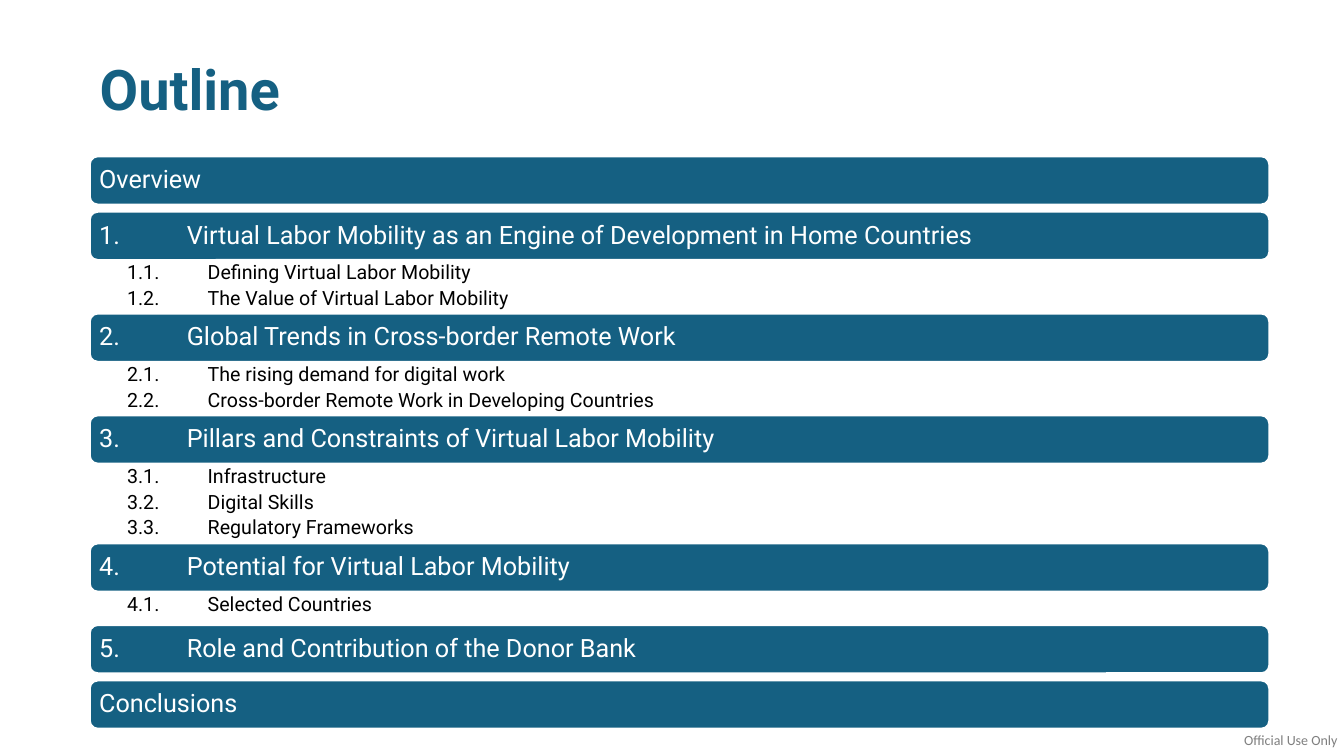
import pptx
import pptx.util
import pptx.dml.color
import pptx.enum.shapes
import pptx.enum.text
import pptx.oxml.ns
import lxml.etree

TITLE = "Outline"
FOOTER = "Official Use Only"
SECTIONS = [
    ("Overview", []),
    ("1.\tVirtual Labor Mobility as an Engine of Development in Home Countries",
     ["1.1.\tDefining Virtual Labor Mobility",
      "1.2.\tThe Value of Virtual Labor Mobility"]),
    ("2.\tGlobal Trends in Cross-border Remote Work",
     ["2.1.\tThe rising demand for digital work",
      "2.2.\tCross-border Remote Work in Developing Countries"]),
    ("3.\tPillars and Constraints of Virtual Labor Mobility",
     ["3.1.\tInfrastructure",
      "3.2.\tDigital Skills",
      "3.3.\tRegulatory Frameworks"]),
    ("4.\tPotential for Virtual Labor Mobility",
     ["4.1.\tSelected Countries"]),
    ("5.\tRole and Contribution of the Donor Bank", []),
    ("Conclusions", []),
]
BLUE, WHITE, BLACK, GRAY = "156082", "FFFFFF", "000000", "7F7F7F"
LEFT, TOP, WIDTH = 0.89, 1.55, 11.7
BAR, GAP = 0.48, 0.07
TOPICS = {0: GAP, 1: 0.33, 2: 0.53, 3: 0.79}

inch = pptx.util.Inches
MIDDLE = pptx.enum.text.MSO_ANCHOR.MIDDLE


def rgb(value):
    return pptx.dml.color.RGBColor.from_string(value)


def write(s, lines, size, color, inset, font="Roboto", bold=False, anchor=None,
          tab=None, spacing=0.9, after=0):
    tf = s.text_frame
    tf.word_wrap = True
    tf.vertical_anchor = anchor or pptx.enum.text.MSO_ANCHOR.TOP
    tf.margin_left, tf.margin_top, tf.margin_right, tf.margin_bottom = map(inch, inset)
    for i, line in enumerate(lines):
        p = tf.paragraphs[0] if i == 0 else tf.add_paragraph()
        r = p.add_run()
        r.text = line
        if tab:
            qn = pptx.oxml.ns.qn
            tabs = lxml.etree.SubElement(p._p.get_or_add_pPr(), qn("a:tabLst"))
            lxml.etree.SubElement(tabs, qn("a:tab"), pos=str(inch(tab)), algn="l")
        p.alignment = pptx.enum.text.PP_ALIGN.LEFT
        p.line_spacing = spacing
        p.space_after = pptx.util.Pt(after)
        p.font.size = pptx.util.Pt(size)
        p.font.name = font
        p.font.bold = bold
        p.font.color.rgb = rgb(color)


def add_text(slide, box, *args, **kwargs):
    write(slide.shapes.add_textbox(*map(inch, box)), *args, **kwargs)


def add_bar(slide, top, heading):
    s = slide.shapes.add_shape(pptx.enum.shapes.MSO_SHAPE.ROUNDED_RECTANGLE,
                               *map(inch, (LEFT, top, WIDTH, BAR)))
    s.shadow.inherit = False
    s.fill.solid()
    s.fill.fore_color.rgb = rgb(BLUE)
    s.line.color.rgb = rgb(WHITE)
    s.line.width = pptx.util.Pt(1.5)
    write(s, [heading], 18, WHITE, [0.07] * 4, anchor=MIDDLE, tab=0.87)


def main():
    """Build the outline slide."""
    prs = pptx.Presentation()
    prs.slide_width, prs.slide_height = inch(13.33), inch(7.5)
    slide = prs.slides.add_slide(prs.slide_layouts[6])
    add_text(slide, (12.34, 7.26, 0.96, 0.17), [FOOTER], 10, GRAY, [0] * 4,
             font="Calibri", spacing=1.0)
    add_text(slide, (LEFT, 0.27, 11.12, 1.29), [TITLE], 40, BLUE,
             (0.1, 0.05, 0.1, 0.05), bold=True, anchor=MIDDLE)
    top = TOP
    for heading, topics in SECTIONS:
        add_bar(slide, top, heading)
        top += BAR
        height = TOPICS[len(topics)]
        if topics:
            add_text(slide, (LEFT, top, WIDTH, height), topics, 14, BLACK,
                     (0.37, 0.03, 0.14, 0.03), tab=0.8, after=3)
        top += height
    prs.save("out.pptx")


if __name__ == "__main__":
    main()
